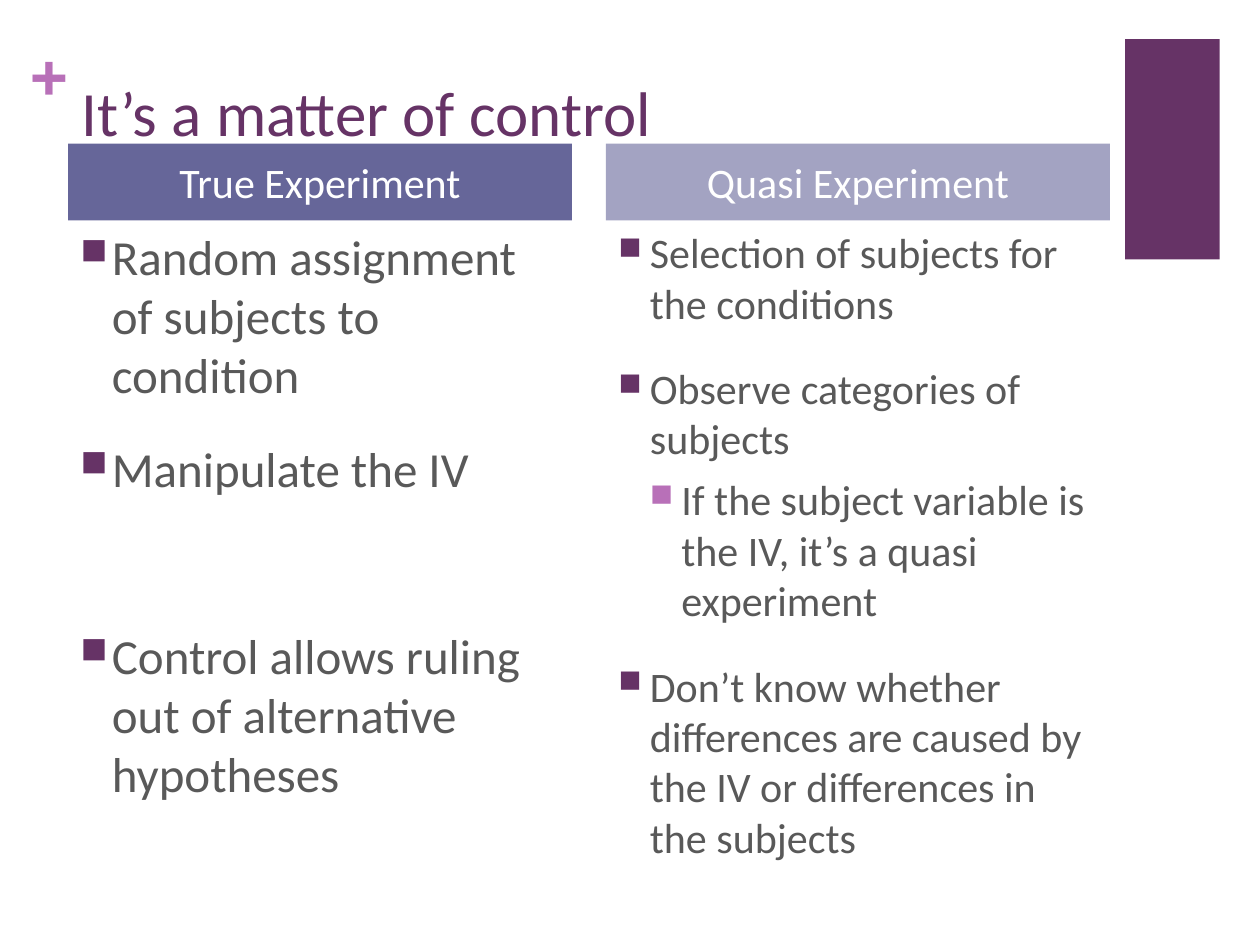
from lxml.etree import SubElement
from pptx import Presentation
from pptx.dml.color import RGBColor
from pptx.enum.shapes import MSO_SHAPE
from pptx.enum.text import MSO_ANCHOR, MSO_AUTO_SIZE, PP_ALIGN
from pptx.oxml.ns import qn
from pptx.util import Inches, Pt

# Content: each bullet is (level, space before in points, text)
TITLE = "It’s a matter of control"
COLUMNS = [
    {"heading": "True Experiment", "fill": "666699", "size": 28, "bullets": [
        (0, 20, "Random assignment of subjects to condition"),
        (0, 20, "Manipulate the IV"),
        (0, 73.6, "Control allows ruling out of alternative hypotheses"),
    ]},
    {"heading": "Quasi Experiment", "fill": "A3A3C2", "size": 24, "bullets": [
        (0, 20, "Selection of subjects for the conditions"),
        (0, 20, "Observe categories of subjects"),
        (1, 6, "If the subject variable is the IV, it’s a quasi experiment"),
        (0, 20, "Don’t know whether differences are caused by the IV "
                "or differences in the subjects"),
    ]},
]
PLUM, ORCHID, GREY, WHITE = "663366", "B870B8", "595959", "FFFFFF"
BULLET_COLORS = [PLUM, ORCHID]

# Column grid
LEFT, STEP, WIDTH = 0.54, 4.27, 4
HEADING_TOP, HEADING_HEIGHT, BODY_HEIGHT = 1.14, 0.61, 4.95


def color(value):
    return RGBColor.from_string(value)


def set_frame(frame, anchor=MSO_ANCHOR.TOP, inset_x=0.1, inset_y=0.05, wrap=True):
    frame.word_wrap = wrap
    frame.auto_size = MSO_AUTO_SIZE.NONE
    frame.vertical_anchor = anchor
    frame.margin_left = frame.margin_right = Inches(inset_x)
    frame.margin_top = frame.margin_bottom = Inches(inset_y)


def write(para, text, size, fill, font="Calibri", bold=False, align=PP_ALIGN.LEFT):
    para.alignment = align
    span = para.add_run()
    span.text = text
    span.font.name = font
    span.font.size = Pt(size)
    span.font.bold = bold
    span.font.color.rgb = color(fill)


def add_bullet(para, level, before):
    para.level = level
    para.space_before = Pt(before)
    properties = para._p.get_or_add_pPr()
    properties.set("marL", str(Inches(0.25 * (level + 1))))
    properties.set("indent", str(Inches(-0.25)))
    bullet_color = SubElement(properties, qn("a:buClr"))
    SubElement(bullet_color, qn("a:srgbClr"), val=BULLET_COLORS[level])
    SubElement(properties, qn("a:buSzPct"), val="75000")
    SubElement(properties, qn("a:buChar"), char="■")


def add_block(page, left, top, width, height, fill):
    block = page.shapes.add_shape(MSO_SHAPE.RECTANGLE, Inches(left), Inches(top),
                                  Inches(width), Inches(height))
    block.shadow.inherit = False
    block.fill.solid()
    block.fill.fore_color.rgb = color(fill)
    block.line.fill.background()
    return block


def add_text_box(page, left, top, width, height, **frame_format):
    box = page.shapes.add_textbox(Inches(left), Inches(top),
                                  Inches(width), Inches(height))
    set_frame(box.text_frame, **frame_format)
    return box.text_frame


def add_column(page, left, column):
    heading = add_block(page, left, HEADING_TOP, WIDTH, HEADING_HEIGHT, column["fill"])
    set_frame(heading.text_frame, anchor=MSO_ANCHOR.MIDDLE, inset_y=0)
    write(heading.text_frame.paragraphs[0], column["heading"], 24, WHITE,
          align=PP_ALIGN.CENTER)

    frame = add_text_box(page, left, HEADING_TOP + HEADING_HEIGHT, WIDTH, BODY_HEIGHT)
    for index, (level, before, text) in enumerate(column["bullets"]):
        para = frame.add_paragraph() if index else frame.paragraphs[0]
        add_bullet(para, level, before)
        write(para, text, column["size"], GREY)


def main():
    deck = Presentation()
    deck.slide_width, deck.slide_height = Inches(10), Inches(7.5)
    page = deck.slides.add_slide(deck.slide_layouts[5])

    # Title
    title = page.shapes.title
    title.left, title.top = Inches(0.55), Inches(0.53)
    title.width, title.height = Inches(8.26), Inches(1.22)
    set_frame(title.text_frame)
    write(title.text_frame.paragraphs[0], TITLE, 36, PLUM)

    # Decoration
    add_block(page, 8.93, 0.31, 0.75, 1.75, PLUM)
    plus = add_text_box(page, 0.24, 0.25, 0.29, 0.61, inset_x=0, inset_y=0, wrap=False)
    write(plus.paragraphs[0], "+", 36, ORCHID, font="TeX Gyre Bonum", bold=True)

    # Comparison columns
    for index, column in enumerate(COLUMNS):
        add_column(page, LEFT + index * STEP, column)

    deck.save("out.pptx")


if __name__ == "__main__":
    main()
